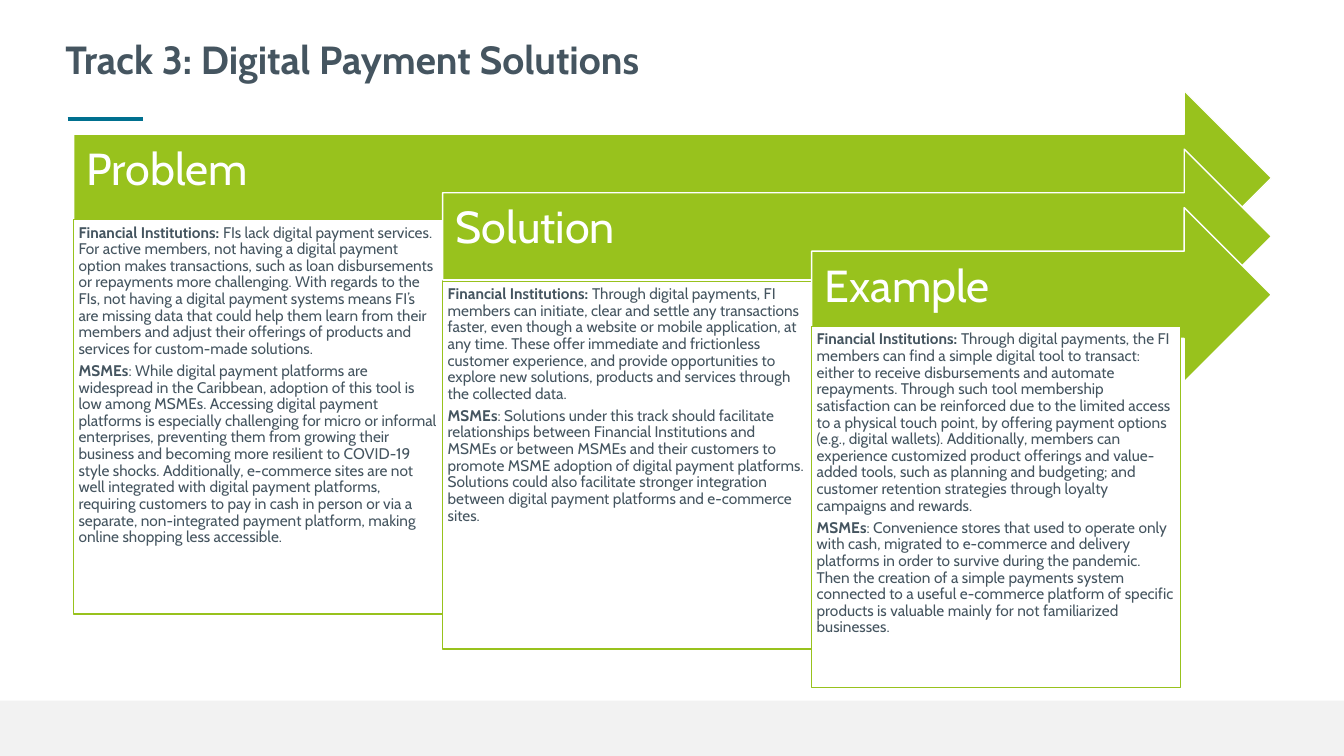
from dataclasses import dataclass

from lxml.etree import SubElement
from pptx import Presentation
from pptx.dml.color import RGBColor
from pptx.enum.shapes import MSO_CONNECTOR, MSO_SHAPE
from pptx.enum.text import MSO_ANCHOR, PP_ALIGN
from pptx.oxml.ns import qn
from pptx.shapes.autoshape import Shape
from pptx.slide import Slide
from pptx.text.text import TextFrame, _Paragraph
from pptx.util import Inches, Pt

FONT = "Cabin"
GREEN = "98C21D"
SLATE = "455560"
WHITE = "FFFFFF"
TEAL = "00708F"
PALE = "F2F2F2"
LEFT, TOP, RIGHT = 0.73, 0.9, 12.61
WIDTH, DROP, TALL = 3.66, 0.58, 1.73


@dataclass
class Column:
    head: str
    top: float
    height: float
    banks: str
    firms: str


COLUMNS = [
    Column(
        "Problem", 2.18, 3.91,
        "FIs lack digital payment services. For active members, not having a digital "
        "payment option makes transactions, such as loan disbursements or repayments "
        "more challenging. With regards to the FIs, not having a digital payment "
        "systems means FI’s are missing data that could help them learn from their "
        "members and adjust their offerings of products and services for custom-made "
        "solutions.",
        ": While digital payment platforms are widespread in the Caribbean, adoption "
        "of this tool is low among MSMEs. Accessing digital payment platforms is "
        "especially challenging for micro or informal enterprises, preventing them "
        "from growing their business and becoming more resilient to COVID-19 style "
        "shocks. Additionally, e-commerce sites are not well integrated with digital "
        "payment platforms, requiring customers to pay in cash in person or via a "
        "separate, non-integrated payment platform, making online shopping less "
        "accessible.",
    ),
    Column(
        "Solution", 2.79, 3.65,
        "Through digital payments, FI members can initiate, clear and settle any "
        "transactions faster, even though a website or mobile application, at any "
        "time. These offer immediate and frictionless customer experience, and "
        "provide opportunities to explore new solutions, products and services "
        "through the collected data.",
        ": Solutions under this track should facilitate relationships between "
        "Financial Institutions and MSMEs or between MSMEs and their customers to "
        "promote MSME adoption of digital payment platforms. Solutions could also "
        "facilitate stronger integration between digital payment platforms and "
        "e-commerce sites.",
    ),
    Column(
        "Example", 3.24, 3.58,
        "Through digital payments, the FI members can find a simple digital tool to "
        "transact: either to receive disbursements and automate repayments. Through "
        "such tool membership satisfaction can be reinforced due to the limited "
        "access to a physical touch point, by offering payment options (e.g., digital "
        "wallets). Additionally, members can experience customized product offerings "
        "and value-added tools, such as planning and budgeting; and customer "
        "retention strategies through loyalty campaigns and rewards.",
        ": Convenience stores that used to operate only with cash, migrated to "
        "e-commerce and delivery platforms in order to survive during the pandemic. "
        "Then the creation of a simple payments system connected to a useful "
        "e-commerce platform of specific products is valuable mainly for not "
        "familiarized businesses.",
    ),
]


def paint(code: str) -> RGBColor:
    return RGBColor.from_string(code)


def add_block(slide: Slide, kind: MSO_SHAPE, left: float, top: float, width: float,
              height: float, fill: str, line: str | None = None) -> Shape:
    block = slide.shapes.add_shape(
        kind, Inches(left), Inches(top), Inches(width), Inches(height))
    block.shadow.inherit = False
    block.fill.solid()
    block.fill.fore_color.rgb = paint(fill)
    if line:
        block.line.color.rgb = paint(line)
        block.line.width = Pt(1)
    else:
        block.line.fill.background()
    return block


def set_frame(frame: TextFrame, anchor: MSO_ANCHOR, left: float, top: float,
              right: float, bottom: float) -> None:
    frame.word_wrap = True
    frame.vertical_anchor = anchor
    frame.margin_left, frame.margin_top = Inches(left), Inches(top)
    frame.margin_right, frame.margin_bottom = Inches(right), Inches(bottom)


def style(para: _Paragraph, size: float, color: str) -> None:
    para.alignment = PP_ALIGN.LEFT
    para.font.name = FONT
    para.font.size = Pt(size)
    para.font.color.rgb = paint(color)


def add_title(slide: Slide, text: str) -> None:
    box = slide.shapes.add_textbox(Inches(0.55), Inches(0.11), Inches(12.11), Inches(0.95))
    set_frame(box.text_frame, MSO_ANCHOR.MIDDLE, 0.1, 0.05, 0.1, 0.05)
    para = box.text_frame.paragraphs[0]
    para.text = text
    style(para, 28, SLATE)
    para.font.bold = True


def add_rule(slide: Slide) -> None:
    rule = slide.shapes.add_connector(
        MSO_CONNECTOR.STRAIGHT, Inches(0.67), Inches(1.18), Inches(1.42), Inches(1.18))
    rule.line.color.rgb = paint(TEAL)
    rule.line.width = Pt(3)
    SubElement(rule._element.spPr, qn("a:effectLst"))


def add_column(slide: Slide, index: int, column: Column) -> None:
    left = LEFT + index * WIDTH
    arrow = add_block(slide, MSO_SHAPE.RIGHT_ARROW, left, TOP + index * DROP,
                      RIGHT - left, TALL, GREEN, WHITE)
    set_frame(arrow.text_frame, MSO_ANCHOR.MIDDLE, 0.13, 0.13, 0.28, 0.27)
    head = arrow.text_frame.paragraphs[0]
    head.text = column.head
    head.line_spacing = 0.9
    style(head, 32, WHITE)

    card = add_block(slide, MSO_SHAPE.RECTANGLE, left, column.top,
                     WIDTH, column.height, WHITE, GREEN)
    frame = card.text_frame
    set_frame(frame, MSO_ANCHOR.TOP, 0.05, 0.05, 0.05, 0.05)
    parts = [("Financial Institutions: ", column.banks), ("MSMEs", column.firms)]
    for order, (label, body) in enumerate(parts):
        para = frame.add_paragraph() if order else frame.paragraphs[0]
        lead = para.add_run()
        lead.text = label
        lead.font.bold = True
        para.add_run().text = body
        para.line_spacing = 0.9
        para.space_after = Pt(3.85)
        style(para, 11, SLATE)


def main() -> None:
    deck = Presentation()
    deck.slide_width, deck.slide_height = Inches(13.33), Inches(7.5)
    slide = deck.slides.add_slide(deck.slide_layouts[6])
    add_block(slide, MSO_SHAPE.RECTANGLE, 0, 6.95, 13.33, 0.55, PALE)
    add_rule(slide)
    add_title(slide, "Track 3: Digital Payment Solutions")
    for index, column in enumerate(COLUMNS):
        add_column(slide, index, column)
    deck.save("out.pptx")


if __name__ == "__main__":
    main()
